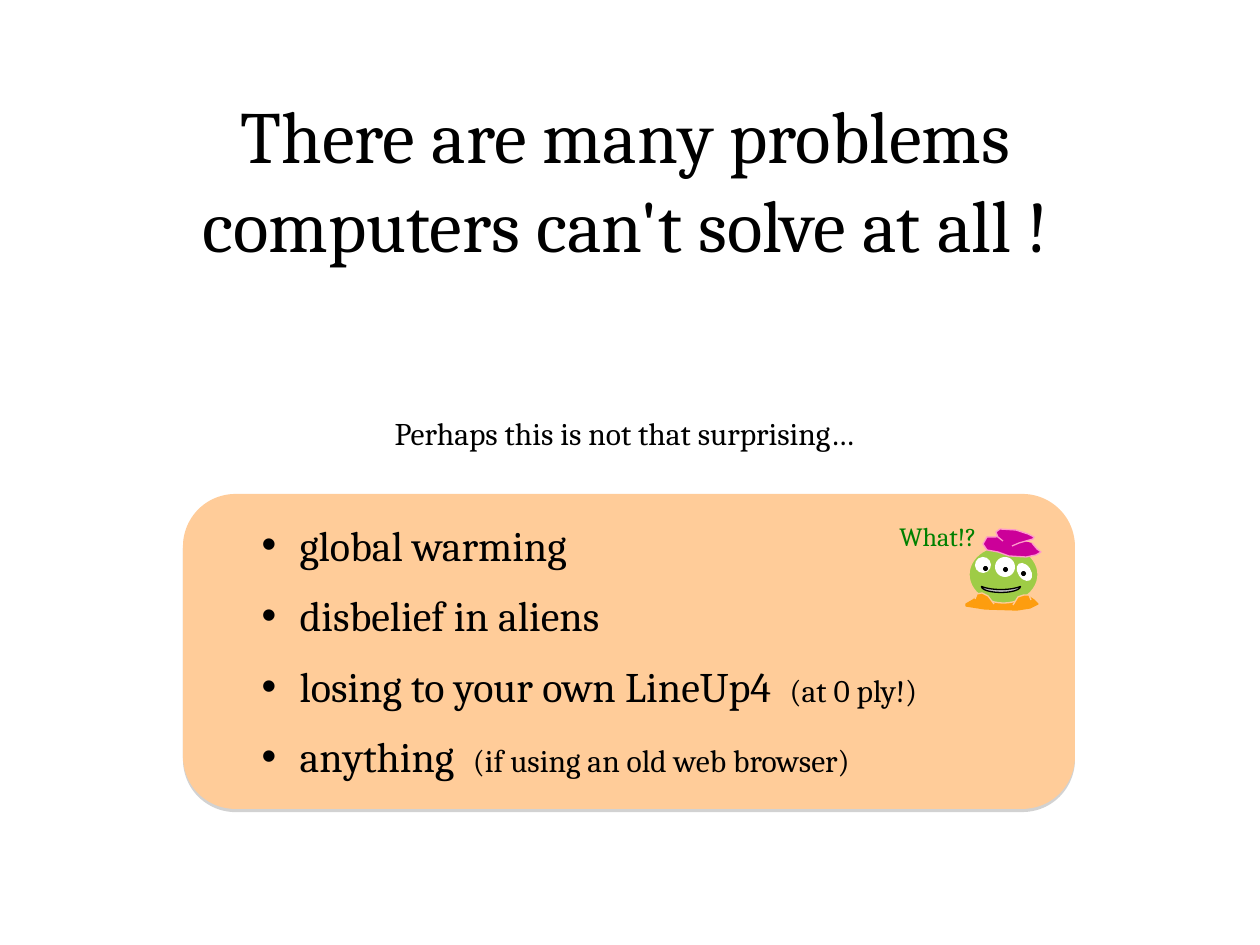
import pptx
import pptx.util
import pptx.dml.color
import pptx.enum.shapes
import pptx.enum.text
import pptx.oxml
import pptx.oxml.ns

PX = 914400 / 126
FONT = "Cambria"
ALIGN = pptx.enum.text.PP_ALIGN
SHAPE = pptx.enum.shapes.MSO_SHAPE
INK, ORANGE, GREEN, MAGENTA = "000000", "FD9D0F", "9ECC46", "CC0099"
PEACH, PINK, WHITE = "FFCC99", "FF99CC", "FFFFFF"

LIST_ITEMS = [
    ("global warming", ""),
    ("disbelief in aliens", ""),
    ("losing to your own LineUp4  ", "(at 0 ply!)"),
    ("anything  ", "(if using an old web browser)"),
]

# Alien parts: outline points, fill, line, closed
COLLAR = ([(1003, 591), (1016, 591), (1028, 596), (1034, 600), (1038, 604), (1030, 608),
           (1017, 610), (985, 609), (966, 606), (966, 604), (973, 600), (980, 595),
           (992, 590)], ORANGE, ORANGE, True)
HAT_AND_ARMS = [
    ([(1002, 536), (995, 537), (987, 537), (983, 544), (987, 550), (998, 552), (1009, 556),
      (1026, 557), (1036, 555), (1041, 552), (1037, 549), (1032, 543)], MAGENTA, PINK, False),
    ([(1003, 541), (998, 537), (996, 532), (1000, 529), (1016, 530), (1028, 534), (1034, 537),
      (1033, 539), (1019, 543), (1012, 546)], MAGENTA, PINK, False),
    ([(975, 599), (977, 594), (982, 593), (988, 596), (994, 604)], ORANGE, PEACH, False),
    ([(1031, 600), (1029, 595), (1024, 595), (1018, 597), (1013, 605)], ORANGE, PEACH, False),
]
# Eyes: left, top, width, height, rotation, and the pupil's corner
EYES = [
    (975, 557, 16, 16, 327, (983, 566)),
    (995, 557, 20, 20, 0, (1003, 567)),
    (1018, 562, 13, 20, 326, (1021, 571)),
]
PUPIL = 5


def px(length):
    return pptx.util.Emu(round(length * PX))


def color(value):
    return pptx.dml.color.RGBColor.from_string(value)


def paint(shape, fill, line=None):
    shape.shadow.inherit = False
    shape.fill.solid()
    shape.fill.fore_color.rgb = color(fill)
    if line:
        shape.line.color.rgb = color(line)
        shape.line.width = pptx.util.Pt(0.75)
    else:
        shape.line.fill.background()


def add_preset(shapes, kind, box, fill, line=None, rotation=0):
    shape = shapes.add_shape(kind, *map(px, box))
    shape.rotation = rotation
    paint(shape, fill, line)
    return shape


def add_outline(shapes, points, fill, line, closed):
    builder = shapes.build_freeform(*points[0], scale=PX)
    builder.add_line_segments(points[1:], close=closed)
    paint(builder.convert_to_shape(), fill, line)


def format_run(run, size, text_color=INK):
    run.font.name = FONT
    run.font.size = pptx.util.Pt(size)
    run.font.color.rgb = color(text_color)


def place(shape, box):
    shape.left, shape.top, shape.width, shape.height = map(px, box)
    frame = shape.text_frame
    frame.word_wrap = True
    frame.auto_size = pptx.enum.text.MSO_AUTO_SIZE.NONE
    frame.vertical_anchor = pptx.enum.text.MSO_ANCHOR.TOP
    return frame


def set_text(shape, box, text, size, align, text_color=INK):
    frame = place(shape, box)
    frame.text = text
    paragraph = frame.paragraphs[0]
    paragraph.alignment = align
    paragraph.space_before = pptx.util.Pt(0)
    format_run(paragraph.runs[0], size, text_color)


def add_label(slide, box, *text_settings):
    set_text(slide.shapes.add_textbox(*map(px, box)), box, *text_settings)


def set_bullet(paragraph, indent):
    properties = paragraph._p.get_or_add_pPr()
    properties.set("marL", str(px(indent)))
    properties.set("indent", str(-px(indent)))
    bullet = pptx.oxml.parse_xml(
        f'<a:buChar {pptx.oxml.ns.nsdecls("a")} char="•"/>')
    properties.append(bullet)


def fill_list(shape, box):
    frame = place(shape, box)
    for index, (text, remark) in enumerate(LIST_ITEMS):
        paragraph = frame.add_paragraph() if index else frame.paragraphs[0]
        paragraph.text = text
        format_run(paragraph.runs[0], 24)
        if remark:
            run = paragraph.add_run()
            run.text = remark
            format_run(run, 18)
        paragraph.space_before = pptx.util.Pt(0)
        paragraph.space_after = pptx.util.Pt(11.5)
        set_bullet(paragraph, 38)


def add_card(slide):
    card = add_preset(slide.shapes, SHAPE.ROUNDED_RECTANGLE, (183, 494, 892, 315), PEACH)
    effects = card._element.spPr.find(pptx.oxml.ns.qn("a:effectLst"))
    effects.append(pptx.oxml.parse_xml(
        f'<a:outerShdw {pptx.oxml.ns.nsdecls("a")} dist="22860" dir="5400000">'
        '<a:srgbClr val="808080"><a:alpha val="35000"/></a:srgbClr></a:outerShdw>'))
    # Send the card behind the placeholders
    slide.shapes._spTree.insert(2, card._element)


def add_alien(slide):
    shapes = slide.shapes.add_group_shape().shapes
    add_outline(shapes, *COLLAR)
    add_preset(shapes, SHAPE.OVAL, (969, 546, 69, 57), GREEN, PEACH)
    for *box, rotation, _ in EYES:
        add_preset(shapes, SHAPE.OVAL, box, WHITE, rotation=rotation)
    for *_, corner in EYES:
        add_preset(shapes, SHAPE.OVAL, (*corner, PUPIL, PUPIL), INK)
    add_preset(shapes, SHAPE.MOON, (998, 570, 6, 39), "C0C0C0", INK, 270)
    for part in HAT_AND_ARMS:
        add_outline(shapes, *part)


def main():
    presentation = pptx.Presentation()
    presentation.slide_width, presentation.slide_height = px(1260), px(945)
    slide = presentation.slides.add_slide(presentation.slide_layouts[1])

    # Heading and caption
    set_text(slide.shapes.title, (163, 84, 925, 190),
             "There are many problems computers can't solve at all !", 42, ALIGN.CENTER)
    add_label(slide, (299, 408, 651, 50),
              "Perhaps this is not that surprising…", 18, ALIGN.CENTER)

    # Card with the list
    add_card(slide)
    fill_list(slide.placeholders[1], (249, 513, 781, 275))

    # Alien and its remark
    add_alien(slide)
    add_label(slide, (766, 514, 223, 44), "What!?", 15, ALIGN.RIGHT, "008000")

    presentation.save("out.pptx")


if __name__ == "__main__":
    main()
